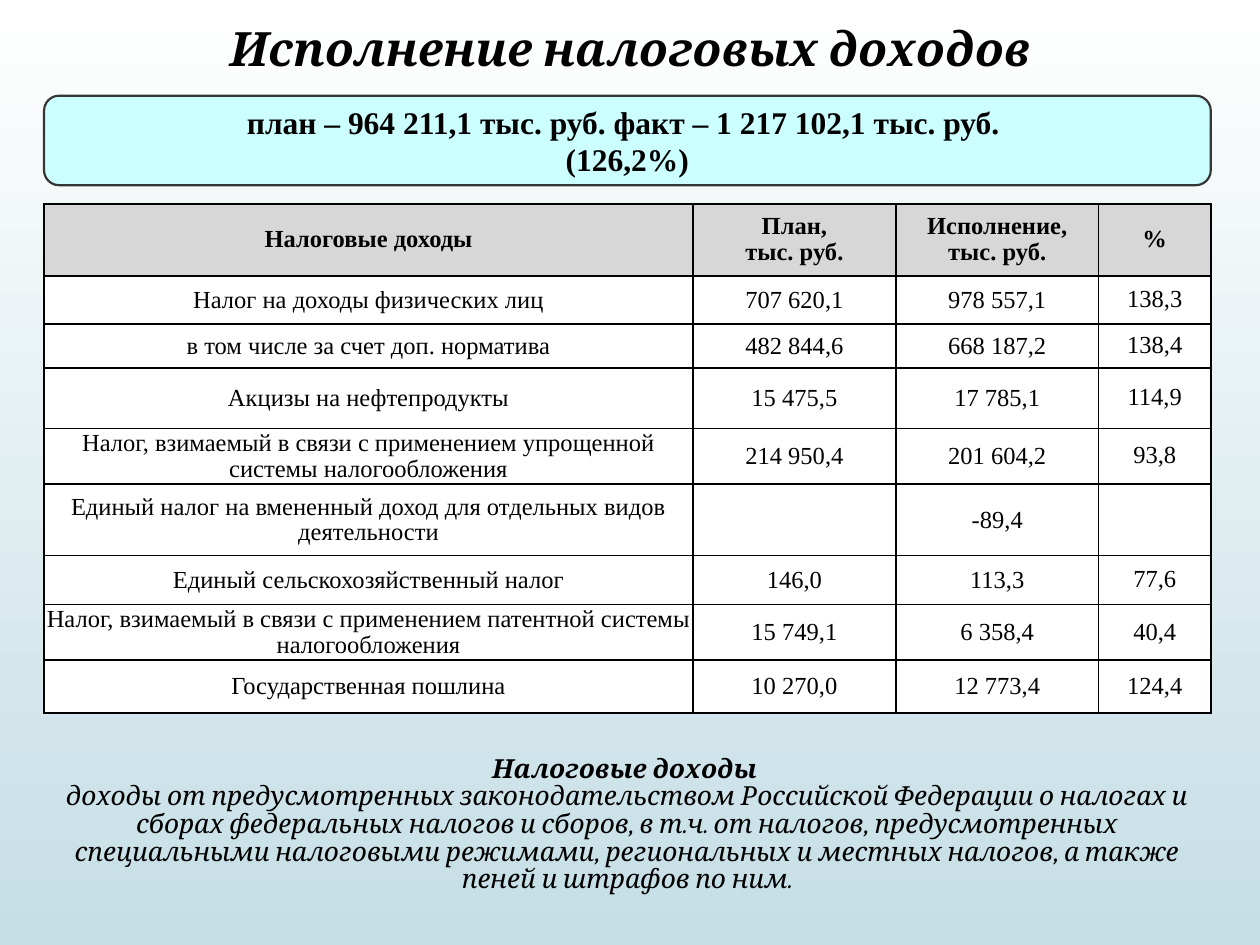
from dataclasses import dataclass

from lxml import etree
from pptx import Presentation
from pptx.dml.color import RGBColor
from pptx.enum.shapes import MSO_SHAPE
from pptx.enum.text import MSO_ANCHOR, PP_ALIGN
from pptx.oxml.ns import qn
from pptx.util import Inches, Pt

CENTER = PP_ALIGN.CENTER
MIDDLE, TOP = MSO_ANCHOR.MIDDLE, MSO_ANCHOR.TOP
ROUNDED = MSO_SHAPE.ROUNDED_RECTANGLE


@dataclass(frozen=True)
class Theme:
    serif: str = "Cambria"
    plain: str = "Times New Roman"
    ink: str = "000000"
    white: str = "FFFFFF"
    sky: str = "C5DEE5"
    banner: str = "CCFFFF"
    banner_line: str = "353535"
    header: str = "D7D7D7"
    title_size: float = 27
    banner_size: float = 18
    note_size: float = 15
    table_size: float = 14
    border: float = 1
    banner_border: float = 1.25


THEME = Theme()

LEFT, WIDTH = 0.35, 9.26
COLUMN_WIDTHS = [5.15, 1.61, 1.61, 0.89]
ROW_HEIGHTS = [0.57, 0.38, 0.35, 0.48, 0.44, 0.57, 0.39, 0.44, 0.42]
HEADER = ["Налоговые доходы", "План,\nтыс. руб.", "Исполнение,\nтыс. руб.", "%"]
TAXES = [
    ["Налог на доходы физических лиц", "707 620,1", "978 557,1", "138,3"],
    ["в том числе за счет доп. норматива", "482 844,6", "668 187,2", "138,4"],
    ["Акцизы на нефтепродукты", "15 475,5", "17 785,1", "114,9"],
    ["Налог, взимаемый в связи с применением упрощенной системы налогообложения",
     "214 950,4", "201 604,2", "93,8"],
    ["Единый налог на вмененный доход для отдельных видов деятельности",
     "", "-89,4", ""],
    ["Единый сельскохозяйственный налог", "146,0", "113,3", "77,6"],
    ["Налог, взимаемый в связи с применением патентной системы налогообложения",
     "15 749,1", "6 358,4", "40,4"],
    ["Государственная пошлина", "10 270,0", "12 773,4", "124,4"],
]
DEFINITION = (
    "доходы от предусмотренных законодательством Российской Федерации о налогах и "
    "сборах федеральных налогов и сборов, в т.ч. от налогов, предусмотренных "
    "специальными налоговыми режимами, региональных и местных налогов, а также "
    "пеней и штрафов по ним."
)


def color(value):
    return RGBColor.from_string(value)


def write(frame, lines, font, size, bold=True, italic=False, spacing=None):
    """Fill a text frame with centred lines, one paragraph each."""
    frame.word_wrap = True
    for index, line in enumerate(lines):
        paragraph = frame.add_paragraph() if index else frame.paragraphs[0]
        paragraph.alignment = CENTER
        if spacing:
            paragraph.line_spacing = spacing
        run = paragraph.add_run()
        run.text = line
        run.font.name, run.font.size = font, Pt(size)
        run.font.bold, run.font.italic = bold, italic
        run.font.color.rgb = color(THEME.ink)


def add_background(slide):
    fill = slide.background.fill
    fill.gradient()
    fill.gradient_angle = 270
    for stop, value, position in zip(
            fill.gradient_stops, (THEME.white, THEME.sky), (0, 1)):
        stop.color.rgb = color(value)
        stop.position = position


def add_title(slide, box):
    frame = slide.shapes.add_textbox(*map(Inches, box)).text_frame
    frame.vertical_anchor = MIDDLE
    write(frame, ["Исполнение налоговых доходов"], THEME.serif,
          THEME.title_size, italic=True)


def add_banner(slide, box):
    banner = slide.shapes.add_shape(ROUNDED, *map(Inches, box))
    banner.shadow.inherit = False
    banner.fill.solid()
    banner.fill.fore_color.rgb = color(THEME.banner)
    banner.line.color.rgb = color(THEME.banner_line)
    banner.line.width = Pt(THEME.banner_border)
    banner.text_frame.vertical_anchor = MIDDLE
    totals = "план – 964 211,1 тыс. руб. факт – 1 217 102,1 тыс. руб. "
    write(banner.text_frame, [totals, "(126,2%)"], THEME.plain, THEME.banner_size)


def add_borders(cell):
    properties = cell._tc.get_or_add_tcPr()
    for side in ("a:lnL", "a:lnR", "a:lnT", "a:lnB"):
        line = etree.SubElement(properties, qn(side), w=str(Pt(THEME.border)))
        fill = etree.SubElement(line, qn("a:solidFill"))
        etree.SubElement(fill, qn("a:srgbClr"), val=THEME.ink)


def set_margins(cell, side, top):
    cell.margin_left = cell.margin_right = Inches(side)
    cell.margin_top, cell.margin_bottom = Inches(top), 0


def add_tax_table(slide, box):
    rows = [HEADER] + TAXES
    table = slide.shapes.add_table(
        len(rows), len(HEADER), *map(Inches, box)).table
    for column, width in zip(table.columns, COLUMN_WIDTHS):
        column.width = Inches(width)
    for row, height in zip(table.rows, ROW_HEIGHTS):
        row.height = Inches(height)
    for r, values in enumerate(rows):
        is_header = r == 0
        for c, value in enumerate(values):
            cell = table.cell(r, c)
            cell.vertical_anchor = MIDDLE
            if not is_header:
                is_percent = c == len(HEADER) - 1
                set_margins(cell, *((0.07, 0) if is_percent else (0.01, 0.01)))
            add_borders(cell)
            cell.fill.solid()
            cell.fill.fore_color.rgb = color(
                THEME.header if is_header else THEME.white)
            if value:
                write(cell.text_frame, value.split("\n"), THEME.plain,
                      THEME.table_size, bold=is_header, spacing=0.95)


def add_definition(slide, box):
    frame = slide.shapes.add_textbox(*map(Inches, box)).text_frame
    frame.vertical_anchor = TOP
    style = dict(font=THEME.serif, size=THEME.note_size, italic=True, spacing=0.88)
    write(frame, ["Налоговые доходы ", DEFINITION], **style)
    frame.paragraphs[1].runs[0].font.bold = False


def main():
    deck = Presentation()
    deck.slide_width, deck.slide_height = Inches(10), Inches(7.5)
    slide = deck.slides.add_slide(deck.slide_layouts[6])
    add_background(slide)
    add_tax_table(slide, (LEFT, 1.62, WIDTH, sum(ROW_HEIGHTS)))
    add_title(slide, (0.51, 0.13, 8.98, 0.49))
    add_banner(slide, (LEFT, 0.76, WIDTH, 0.71))
    add_definition(slide, (LEFT, 5.95, WIDTH, 1.11))
    deck.save("out.pptx")


if __name__ == "__main__":
    main()
